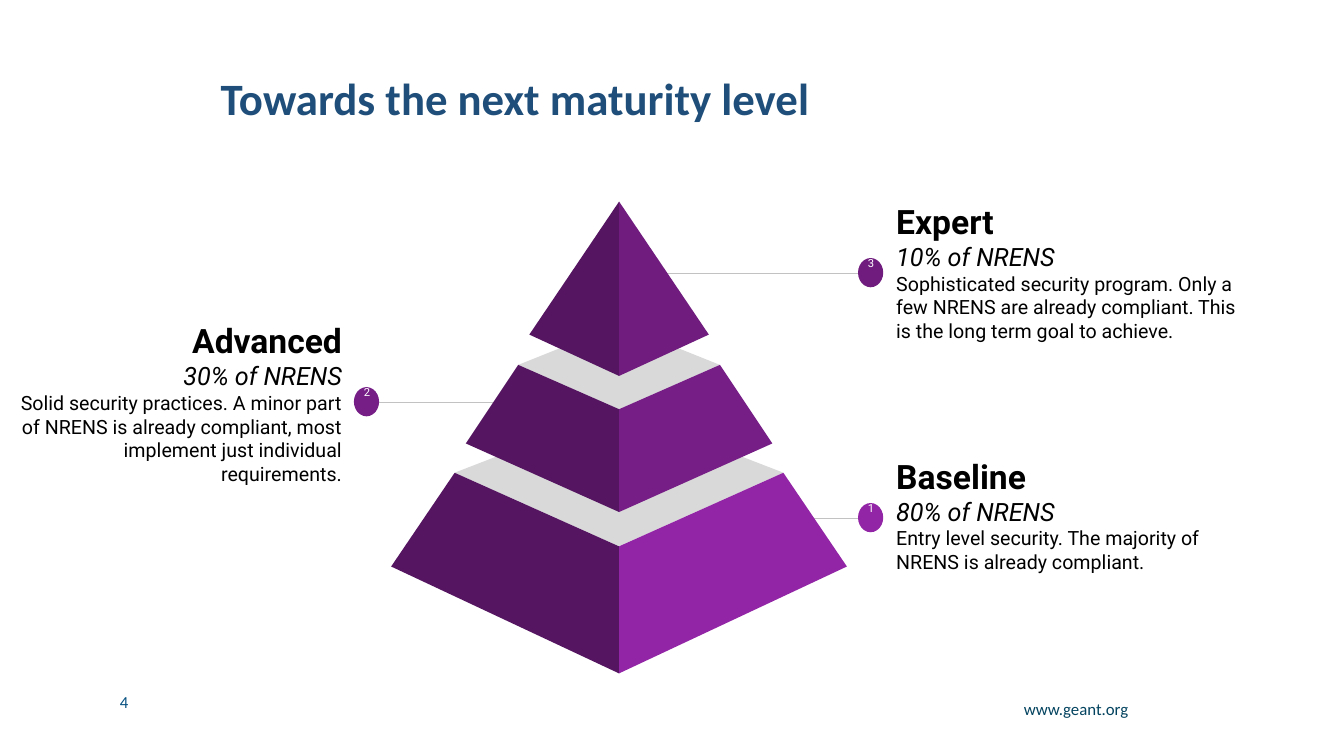
from pptx import Presentation
from pptx.dml.color import RGBColor as RGB
from pptx.enum.shapes import MSO_CONNECTOR as Line, MSO_SHAPE as Shape
from pptx.enum.text import MSO_ANCHOR as Anchor, PP_ALIGN as Align
from pptx.oxml.ns import qn
from pptx.util import Inches, Pt
from lxml import etree

BLACK = RGB(0x00, 0x00, 0x00)
WHITE = RGB(0xFF, 0xFF, 0xFF)
NAVY = RGB(0x1E, 0x4E, 0x79)
BLUE = RGB(0x06, 0x50, 0x81)
TEAL = RGB(0x03, 0x43, 0x5F)
GREY = RGB(0xC2, 0xC2, 0xC2)
LID = RGB(0xD9, 0xD9, 0xD9)
SHADE = RGB(0x55, 0x15, 0x61)
LOW = RGB(0x92, 0x25, 0xA5)
MID = RGB(0x76, 0x1E, 0x86)
HIGH = RGB(0x70, 0x1C, 0x7F)

LEVELS = [
    ((8.79, 4.11, 3.59, 1.99), 5.14, 8.01, LOW, "1", "Baseline", "80% of NRENS",
     "Entry level security. The majority of NRENS is already compliant."),
    ((0, 3, 3.49, 1.99), 3.99, 4.93, MID, "2", "Advanced", "30% of NRENS",
     "Solid security practices. A minor part of NRENS is already compliant, "
     "most implement just individual requirements."),
    ((8.79, 1.7, 3.59, 1.99), 2.71, 6.57, HIGH, "3", "Expert", "10% of NRENS",
     "Sophisticated security program. Only a few NRENS are already compliant. "
     "This is the long term goal to achieve."),
]

# half widths at top and foot, then heights: back, shoulder, front top, foot, front foot
TIERS = [
    (1.63, 2.26, 2.06, 2.69, 3.42, 3.62, 4.68, LOW),
    (1.0, 1.52, 1.22, 1.62, 2.06, 2.4, 3.08, MID),
    (0, 0.89, 0, 0, 0, 1.32, 1.73, HIGH),
]


def apply(item, values):
    for key, value in values.items():
        setattr(item, key, value)


def paint(shape, color):
    shape.shadow.inherit = False
    shape.fill.solid()
    shape.fill.fore_color.rgb = color
    shape.line.fill.background()


def write(slide, box, rows, pad=0.05, anchor=Anchor.TOP, **form):
    frame = slide.shapes.add_textbox(*map(Inches, box)).text_frame
    apply(frame, dict(word_wrap=True, vertical_anchor=anchor,
                      margin_left=Inches(0.1), margin_right=Inches(0.1),
                      margin_top=Inches(pad), margin_bottom=Inches(pad)))
    for at, (text, color, font) in enumerate(rows):
        para = frame.add_paragraph() if at else frame.paragraphs[0]
        apply(para, form)
        run = para.add_run()
        run.text = text
        apply(run.font, font)
        run.font.color.rgb = color
    return frame


def add_frame(slide):
    small = dict(name="Calibri", size=Pt(12))
    write(slide, (1.09, 6.81, 1.45, 0.3), [("4", BLUE, small)])
    write(slide, (9.61, 6.91, 1.68, 0.37), [("www.geant.org", TEAL, small)],
          alignment=Align.RIGHT, line_spacing=0.9)
    big = dict(name="Calibri", size=Pt(32), bold=True)
    title = write(slide, (1.09, 0.77, 10.82, 0.47),
                  [("Towards the next maturity level", NAVY, big)],
                  anchor=Anchor.MIDDLE, line_spacing=0.9)
    props = title.paragraphs[0]._p.get_or_add_pPr()
    for key in ("marL", "indent"):
        props.set(key, str(Inches(0.5)))


def add_level(slide, box, mid, tip, color, mark, name, share, text):
    left, top, width, height = box
    right = left > tip
    dot = left - 0.28 if right else left + width + 0.02
    near = dot + (0.25 if right else 0.08)
    line = slide.shapes.add_connector(
        Line.STRAIGHT, *map(Inches, (tip, mid, near, mid)))
    line.line.color.rgb = GREY
    line.line.width = Pt(0.75)
    etree.SubElement(line._element.spPr, qn("a:effectLst"))
    rows = [
        (name, BLACK, dict(name="Roboto", size=Pt(24), bold=True)),
        (share, BLACK, dict(name="Roboto", size=Pt(18), italic=True)),
        (text, BLACK, dict(name="Roboto", size=Pt(14))),
    ]
    frame = write(slide, box, rows, 0.1, Anchor.MIDDLE,
                  alignment=Align.LEFT if right else Align.RIGHT)
    frame.paragraphs[-1].space_after = Pt(16)
    disc = slide.shapes.add_shape(
        Shape.OVAL, *map(Inches, (dot, mid - 0.15, 0.25, 0.29)))
    paint(disc, color)
    write(slide, (dot - 0.03, mid - 0.23, 0.32, 0.45),
          [(mark, WHITE, dict(name="Roboto", size=Pt(8)))], 0.1,
          alignment=Align.CENTER, space_after=Pt(16))


def add_face(slide, points, color):
    spots = [(Inches(x), Inches(y)) for x, y in points]
    form = slide.shapes.build_freeform(*spots[0])
    form.add_line_segments(spots[1:], close=True)
    paint(form.convert_to_shape(), color)


def add_tiers(slide, left, top, width):
    mid = left + width / 2
    for head, base, back, edge, front, foot, end, color in TIERS:
        if head:
            lid = [(-head, edge), (0, front), (head, edge), (0, back)]
            add_face(slide, [(mid + x, top + y) for x, y in lid], LID)
        side = [(head, edge), (base, foot), (0, end), (0, front)]
        for sign, tone in ((-1, SHADE), (1, color)):
            add_face(slide, [(mid + sign * x, top + y) for x, y in side], tone)


def main():
    deck = Presentation()
    deck.slide_width, deck.slide_height = Inches(13.33), Inches(7.5)
    slide = deck.slides.add_slide(deck.slide_layouts[6])
    add_frame(slide)
    for level in LEVELS:
        add_level(slide, *level)
    add_tiers(slide, 3.88, 2, 4.52)
    deck.save("out.pptx")


if __name__ == "__main__":
    main()
